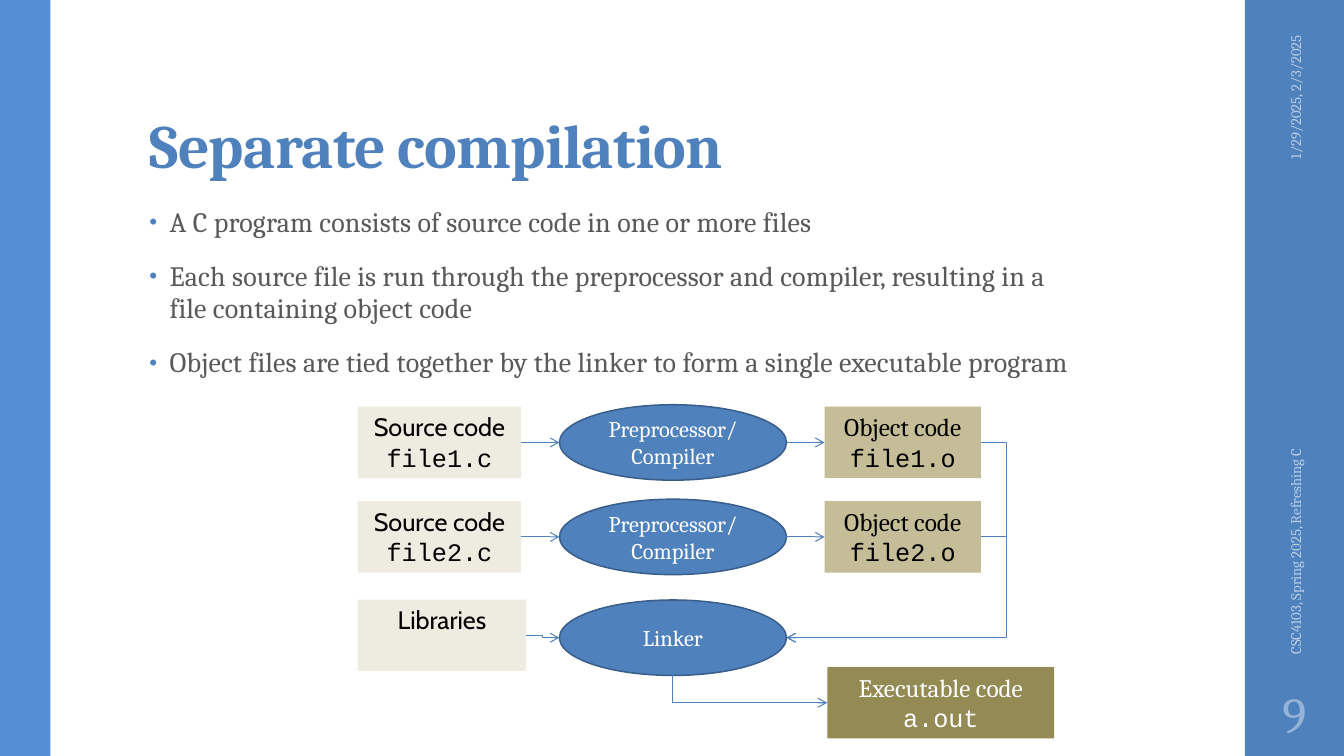
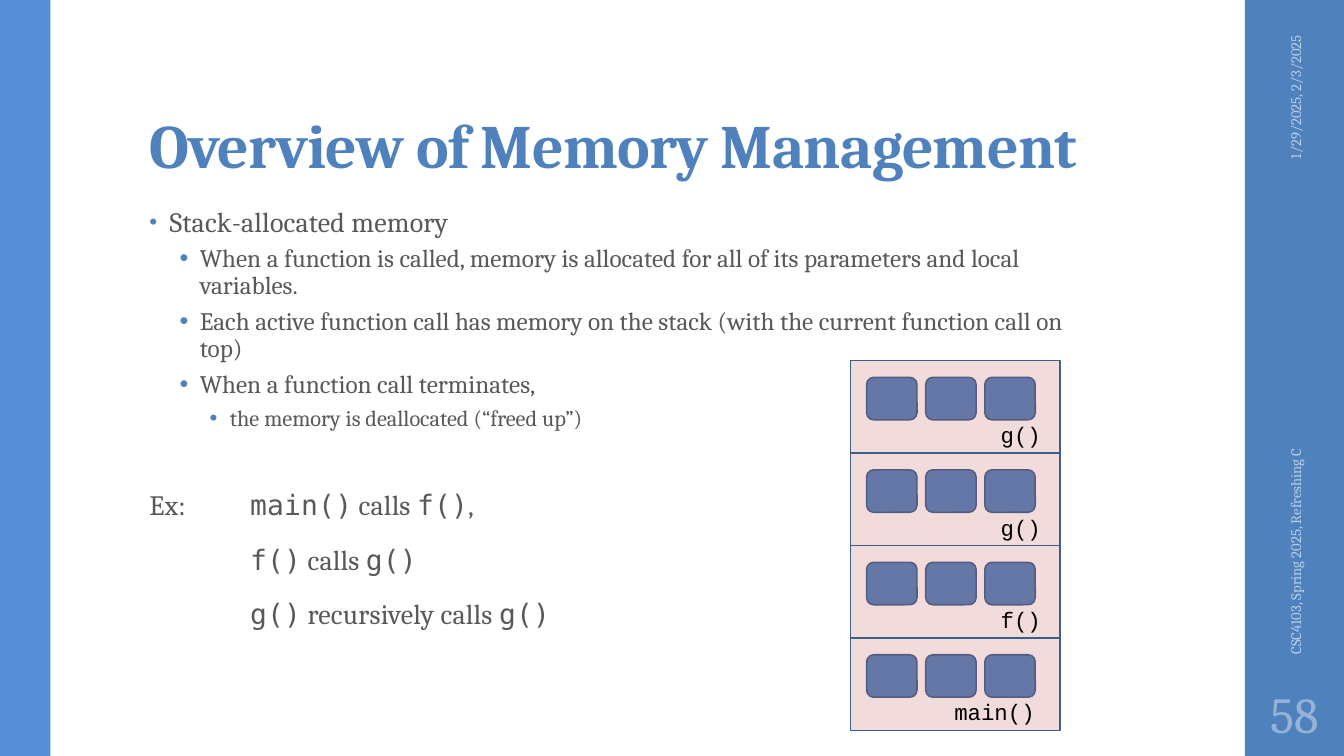
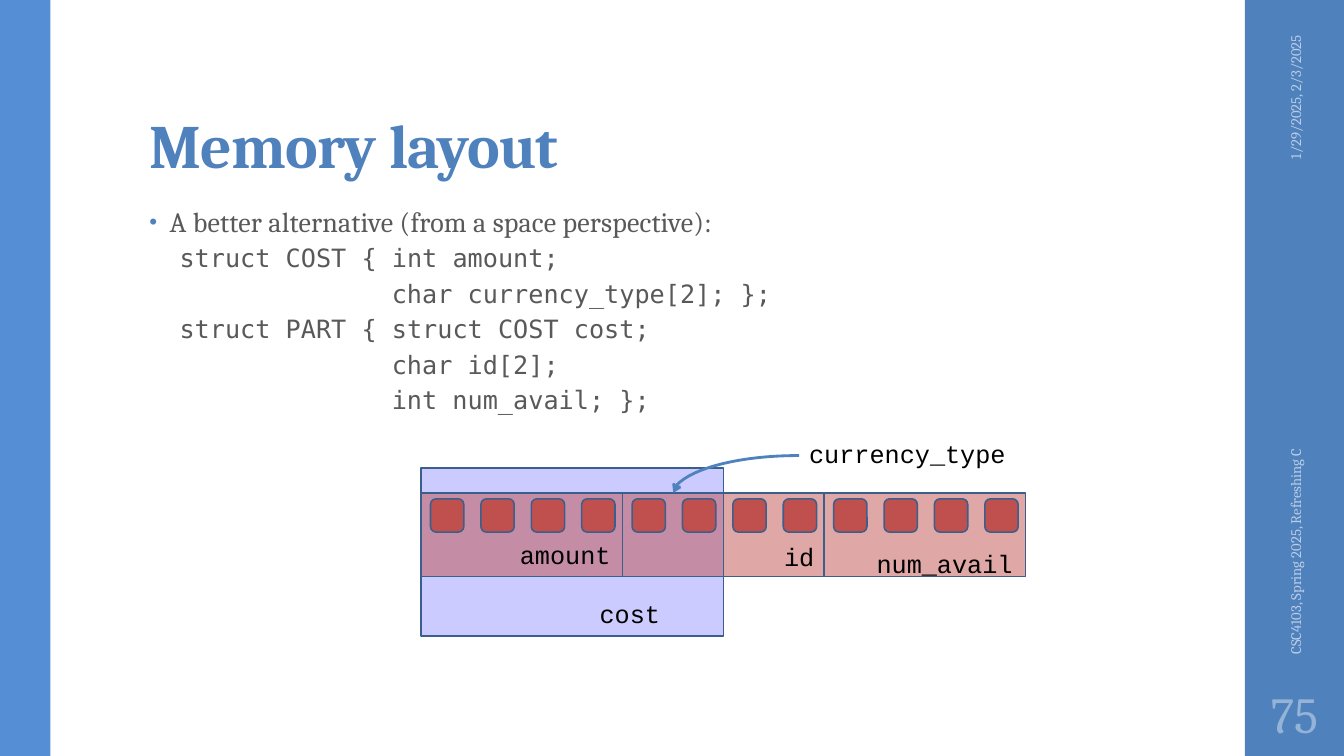
import dataclasses
import typing

import lxml.etree
import pptx
import pptx.dml.color
import pptx.enum.shapes
import pptx.enum.text
import pptx.oxml.ns
import pptx.util

Cm = pptx.util.Cm
Pt = pptx.util.Pt
qn = pptx.oxml.ns.qn
Align = pptx.enum.text.PP_ALIGN
Anchor = pptx.enum.text.MSO_ANCHOR
AutoSize = pptx.enum.text.MSO_AUTO_SIZE
Preset = pptx.enum.shapes.MSO_SHAPE
ConnectorKind = pptx.enum.shapes.MSO_CONNECTOR

COLOURS = {
    "blue": "4F81BD", "left_band": "558ED5", "outline": "3A5F8C",
    "body": "595959", "footer": "B9CDE5", "number": "95B3D7",
    "black": "000000", "white": "FFFFFF", "source": "EEECE1",
    "object": "C4BD97", "executable": "948A54", "red": "C0504D",
    "lilac": "9999FF",
}
SLIDE_WIDTH, SLIDE_HEIGHT = 33.87, 19.05


class Place(typing.NamedTuple):
    left: float
    top: float
    width: float
    height: float

    def lengths(self) -> list:
        return [Cm(value) for value in self]


@dataclasses.dataclass(frozen=True)
class TextStyle:
    """Text between backticks takes the code face."""
    size: float
    colour: str
    face: str = "Cambria"
    code_face: str = "Courier New"
    bold: bool = False
    tracking: int = 0


@dataclasses.dataclass(frozen=True)
class ListStyle:
    text: TextStyle
    left: float
    indent: float = 0
    level: int = 0
    bullet_percent: int = 0
    line: float = 0.9
    before: float = 3
    after: float = 3


@dataclasses.dataclass(frozen=True)
class Part:
    place: Place
    fill: str
    lines: tuple = ()
    style: typing.Optional[TextStyle] = None
    preset: typing.Any = Preset.RECTANGLE
    outline: bool = False
    opacity: int = 100
    anchor: typing.Any = Anchor.TOP
    wrap: bool = True


@dataclasses.dataclass(frozen=True)
class Link:
    start: tuple
    end: tuple
    preset: str = "bentConnector3"
    adjust: int = 50000
    width: float = 0.75
    arrow: str = "tailEnd"


# Text styles
TITLE = TextStyle(44, "blue", bold=True, tracking=-50)
BODY_LARGE = TextStyle(20, "body", code_face="DejaVu Sans Mono", tracking=10)
BODY_MEDIUM = TextStyle(18, "body", code_face="DejaVu Sans Mono")
SOURCE_TEXT = TextStyle(18, "black", face="Cabin")
OBJECT_TEXT = TextStyle(18, "black")
EXECUTABLE_TEXT = TextStyle(18, "white")
TOOL_TEXT = TextStyle(16, "white")
CALL_TEXT = TextStyle(16, "black")
FOOTER = TextStyle(10.5, "footer")
NUMBER = TextStyle(36, "number")

# List styles
POINT = ListStyle(BODY_LARGE, 0.51, -0.51, 0, 80, 0.95, 14, 2)
SUBPOINT = ListStyle(BODY_MEDIUM, 1.27, -0.51, 1, 100)
DETAIL = ListStyle(TextStyle(16, "body"), 2.03, -0.51, 2, 100)
EXAMPLE = ListStyle(BODY_LARGE, 2.54, -2.54, line=0.95, before=14, after=2)
EXAMPLE_FIRST = dataclasses.replace(EXAMPLE, before=39.3)
EXAMPLE_NEXT = dataclasses.replace(EXAMPLE, indent=0)
CODE = ListStyle(BODY_MEDIUM, 0.76, level=1)
CODE_MEMBER = dataclasses.replace(CODE, left=6.11)


def colour(name: str):
    return pptx.dml.color.RGBColor.from_string(COLOURS[name])


def apply(target, formats: dict) -> None:
    for name, value in formats.items():
        setattr(target, name, value)


# Text
def write(para, text: str, style: TextStyle) -> None:
    for index, piece in enumerate(text.split("`")):
        if not piece:
            continue
        span = para.add_run()
        span.text = piece
        apply(span.font, {
            "name": style.code_face if index % 2 else style.face,
            "size": Pt(style.size), "bold": style.bold,
        })
        span.font.color.rgb = colour(style.colour)
        span._r.get_or_add_rPr().set("spc", str(style.tracking))


def write_lines(frame, lines: typing.Sequence[str], style: TextStyle, align) -> None:
    for index, line in enumerate(lines):
        para = frame.add_paragraph() if index else frame.paragraphs[0]
        para.alignment = align
        write(para, line, style)


def set_bullet(para, style: ListStyle) -> None:
    properties = para._p.get_or_add_pPr()
    properties.set("marL", str(Cm(style.left)))
    properties.set("indent", str(Cm(style.indent)))
    if not style.bullet_percent:
        lxml.etree.SubElement(properties, qn("a:buNone"))
        return
    tint = lxml.etree.SubElement(properties, qn("a:buClr"))
    lxml.etree.SubElement(tint, qn("a:srgbClr"), val=COLOURS["blue"])
    lxml.etree.SubElement(properties, qn("a:buSzPct"), val=str(style.bullet_percent * 1000))
    lxml.etree.SubElement(properties, qn("a:buFont"), typeface="Arial")
    lxml.etree.SubElement(properties, qn("a:buChar"), char="•")


def add_label(page, place: Place, text: str, style: TextStyle, align=Align.LEFT,
              rotation: float = 0, **frame_formats) -> None:
    box = page.shapes.add_textbox(*place.lengths())
    box.rotation = rotation
    apply(box.text_frame, {"word_wrap": True, **frame_formats})
    write_lines(box.text_frame, [text], style, align)


def add_code_label(page, place: Place, text: str, style: TextStyle) -> None:
    add_label(page, place, f"`{text}`", style, word_wrap=False,
              auto_size=AutoSize.SHAPE_TO_FIT_TEXT)


# Shapes and connectors
def add_part(page, part: Part):
    shape = page.shapes.add_shape(part.preset, *part.place.lengths())
    shape.shadow.inherit = False
    shape.fill.solid()
    shape.fill.fore_color.rgb = colour(part.fill)
    if part.opacity < 100:
        tint = shape.element.find(".//" + qn("a:srgbClr"))
        lxml.etree.SubElement(tint, qn("a:alpha"), val=str(part.opacity * 1000))
    if part.outline:
        shape.line.color.rgb = colour("outline")
        shape.line.width = Pt(1.1)
    else:
        shape.line.fill.background()
    if part.lines:
        apply(shape.text_frame, {"vertical_anchor": part.anchor, "word_wrap": part.wrap})
        write_lines(shape.text_frame, part.lines, part.style, Align.CENTER)
    return shape


def add_link(page, link: Link) -> None:
    kind = ConnectorKind.CURVE if link.preset.startswith("curved") else ConnectorKind.ELBOW
    ends = [Cm(value) for value in (*link.start, *link.end)]
    connector = page.shapes.add_connector(kind, *ends)
    connector.line.color.rgb = colour("blue")
    connector.line.width = Pt(link.width)
    properties = connector.element.spPr
    geometry = properties.find(qn("a:prstGeom"))
    geometry.set("prst", link.preset)
    if link.preset.endswith("3"):
        guides = geometry.find(qn("a:avLst"))
        if guides is None:
            guides = lxml.etree.SubElement(geometry, qn("a:avLst"))
        lxml.etree.SubElement(guides, qn("a:gd"), name="adj1", fmla=f"val {link.adjust}")
    lxml.etree.SubElement(properties.find(qn("a:ln")), qn(f"a:{link.arrow}"), type="arrow")
    lxml.etree.SubElement(properties, qn("a:effectLst"))


# Shared page furniture
def add_bands(deck, page) -> None:
    """Draw the side bands and hand them to the master."""
    for place, fill in (
        (Place(31.37, 0, 2.5, SLIDE_HEIGHT), "blue"),
        (Place(0, 0, 1.27, SLIDE_HEIGHT), "left_band"),
    ):
        band = add_part(page, Part(place, fill))
        deck.slide_master.shapes.element.append(band.element)


def move(box, place: Place) -> None:
    apply(box, dict(zip(("left", "top", "width", "height"), place.lengths())))


def add_page(deck, title: str, number: int, items: typing.Sequence[tuple]):
    page = deck.slides.add_slide(deck.slide_layouts[1])
    heading, body = page.placeholders

    move(heading, Place(3.51, 0.81, 26.92, 3.89))
    apply(heading.text_frame, {
        "vertical_anchor": Anchor.BOTTOM, "auto_size": AutoSize.NONE, "word_wrap": True,
        "margin_left": Cm(0.25), "margin_right": Cm(0.25),
        "margin_top": Cm(0.08), "margin_bottom": Cm(0.13),
    })
    write_lines(heading.text_frame, [title], TITLE, Align.LEFT)
    heading.text_frame.paragraphs[0].line_spacing = 0.9

    move(body, Place(3.51, 5.08, 23.88, 12.09))
    apply(body.text_frame, {"auto_size": AutoSize.NONE, "word_wrap": True})
    for index, (style, text) in enumerate(items):
        para = body.text_frame.add_paragraph() if index else body.text_frame.paragraphs[0]
        apply(para, {
            "level": style.level, "alignment": Align.LEFT, "line_spacing": style.line,
            "space_before": Pt(style.before), "space_after": Pt(style.after),
        })
        set_bullet(para, style)
        write(para, text, style.text)

    middle = {"vertical_anchor": Anchor.MIDDLE}
    add_label(page, Place(30, 2.77, 5.28, 1.02), "1/29/2025, 2/3/2025", FOOTER,
              Align.RIGHT, 270, **middle)
    add_label(page, Place(27.66, 11.25, 9.96, 1.02), "CSC4103, Spring 2025, Refreshing C",
              FOOTER, Align.LEFT, 270, **middle)
    sides = ("left", "right", "top", "bottom")
    add_label(page, Place(31.37, 17.15, 2.5, 1.65), str(number), NUMBER, Align.CENTER,
              **middle, **{f"margin_{side}": Cm(0.13) for side in sides})
    return page


# Slide: separate compilation
def build_compilation(deck):
    page = add_page(deck, "Separate compilation", 9, [
        (POINT, "A C program consists of source code in one or more files"),
        (POINT, "Each source file is run through the preprocessor and compiler, "
                "resulting in a file containing object code"),
        (POINT, "Object files are tied together by the linker to form a single "
                "executable program"),
    ])
    box_height, tool_height = 1.8, 1.9
    source_left, source_width = 9.02, 4.11
    tool_left, tool_width = 14.1, 5.72
    object_left, object_width = 20.78, 3.94
    tool_right = tool_left + tool_width
    object_right = object_left + object_width
    linker_middle = 16.07

    def add_box(left, middle, width, fill, lines, style, wrap=False) -> None:
        place = Place(left, middle - box_height / 2, width, box_height)
        add_part(page, Part(place, fill, lines, style, wrap=wrap))

    def add_tool(middle, *lines) -> None:
        place = Place(tool_left, middle - tool_height / 2, tool_width, tool_height)
        add_part(page, Part(place, "blue", lines, TOOL_TEXT, Preset.OVAL, True,
                            anchor=Anchor.MIDDLE))

    for row in range(2):
        middle = 11.15 + 2.38 * row
        name = f"file{row + 1}"
        add_box(source_left, middle, source_width, "source",
                ("Source code", f"`{name}.c`"), SOURCE_TEXT)
        add_tool(middle, "Preprocessor/", "Compiler")
        add_box(object_left, middle, object_width, "object",
                ("Object code", f"`{name}.o`"), OBJECT_TEXT)
        for link in (
            Link((source_left + source_width, middle), (tool_left, middle)),
            Link((tool_right, middle), (object_left, middle)),
            Link((object_right, middle), (tool_right, linker_middle), adjust=-13000),
        ):
            add_link(page, link)

    add_tool(linker_middle, "Linker")
    add_box(source_left, 16.01, 4.24, "source", ("Libraries",), SOURCE_TEXT, True)
    add_link(page, Link((13.26, 16.01), (tool_left, linker_middle)))
    add_box(20.85, 17.71, tool_width, "executable",
            ("Executable code", "`a.out`"), EXECUTABLE_TEXT, True)
    add_link(page, Link((20.85, 17.71),
                        (tool_left + tool_width / 2, linker_middle + tool_height / 2),
                        "bentConnector2", arrow="headEnd"))
    return page


# Slide: call stack
def build_stack(deck) -> None:
    page = add_page(deck, "Overview of Memory Management", 58, [
        (POINT, "Stack-allocated memory"),
        (SUBPOINT, "When a function is called, memory is allocated for all of its "
                   "parameters and local variables."),
        (SUBPOINT, "Each active function call has memory on the stack (with the "
                   "current function call on top)"),
        (SUBPOINT, "When a function call terminates,"),
        (DETAIL, "the memory is deallocated (“freed up”)"),
        (EXAMPLE_FIRST, "Ex:\t`main()` calls `f()`,"),
        (EXAMPLE_NEXT, "`f()` calls `g()`"),
        (EXAMPLE_NEXT, "`g()` recursively calls `g()`"),
    ])
    left, frame_height = 21.43, 2.33
    for row, call in enumerate(("g()", "g()", "f()", "main()")):
        top = 9.09 + row * frame_height
        for column in range(3):
            place = Place(left + 0.41 + 1.49 * column, top + 0.42, 1.27, 1.07)
            add_part(page, Part(place, "blue", preset=Preset.ROUNDED_RECTANGLE, outline=True))
        add_part(page, Part(Place(left, top, 5.28, frame_height), "red",
                            outline=True, opacity=20))
        label_left, label_width = (23.8, 2.57) if call == "main()" else (24.97, 1.55)
        add_code_label(page, Place(label_left, top + 1.4, label_width, 0.94), call, CALL_TEXT)


# Slide: memory layout
def build_layout(deck) -> None:
    page = add_page(deck, "Memory layout", 75, [
        (POINT, "A better alternative (from a space perspective):"),
        (CODE, "`struct COST { int amount;`"),
        (CODE_MEMBER, "`char currency_type[2]; };`"),
        (CODE, "`struct PART { struct COST cost;`"),
        (CODE_MEMBER, "`char id[2];`"),
        (CODE_MEMBER, "`int num_avail; };`"),
    ])
    left, byte_step = 10.61, 1.27
    add_part(page, Part(Place(left, 11.79, 6 * byte_step, 4.24), "lilac",
                        outline=True, opacity=50))
    first_byte = 0
    for size in (4, 2, 2, 4):
        place = Place(left + first_byte * byte_step, 12.42, size * byte_step, 2.11)
        add_part(page, Part(place, "red", outline=True, opacity=50))
        first_byte += size
    for byte in range(first_byte):
        place = Place(left + 0.24 + byte * byte_step, 12.57, 0.84, 0.84)
        add_part(page, Part(place, "red", preset=Preset.ROUNDED_RECTANGLE, outline=True))
    for text, label_left, top, width in (
        ("id", 19.51, 13.51, 1.3),
        ("amount", 12.85, 13.46, 2.84),
        ("num_avail", 21.84, 13.69, 3.99),
        ("cost", 14.86, 14.96, 2.06),
        ("currency_type", 20.14, 10.92, 5.54),
    ):
        add_code_label(page, Place(label_left, top, width, 1.02), text, OBJECT_TEXT)
    add_link(page, Link((20.14, 11.48), (16.97, 12.42), "curvedConnector2", width=2))


def main() -> None:
    deck = pptx.Presentation()
    deck.slide_width, deck.slide_height = Cm(SLIDE_WIDTH), Cm(SLIDE_HEIGHT)
    first_page = build_compilation(deck)
    add_bands(deck, first_page)
    build_stack(deck)
    build_layout(deck)
    deck.save("out.pptx")


if __name__ == "__main__":
    main()
